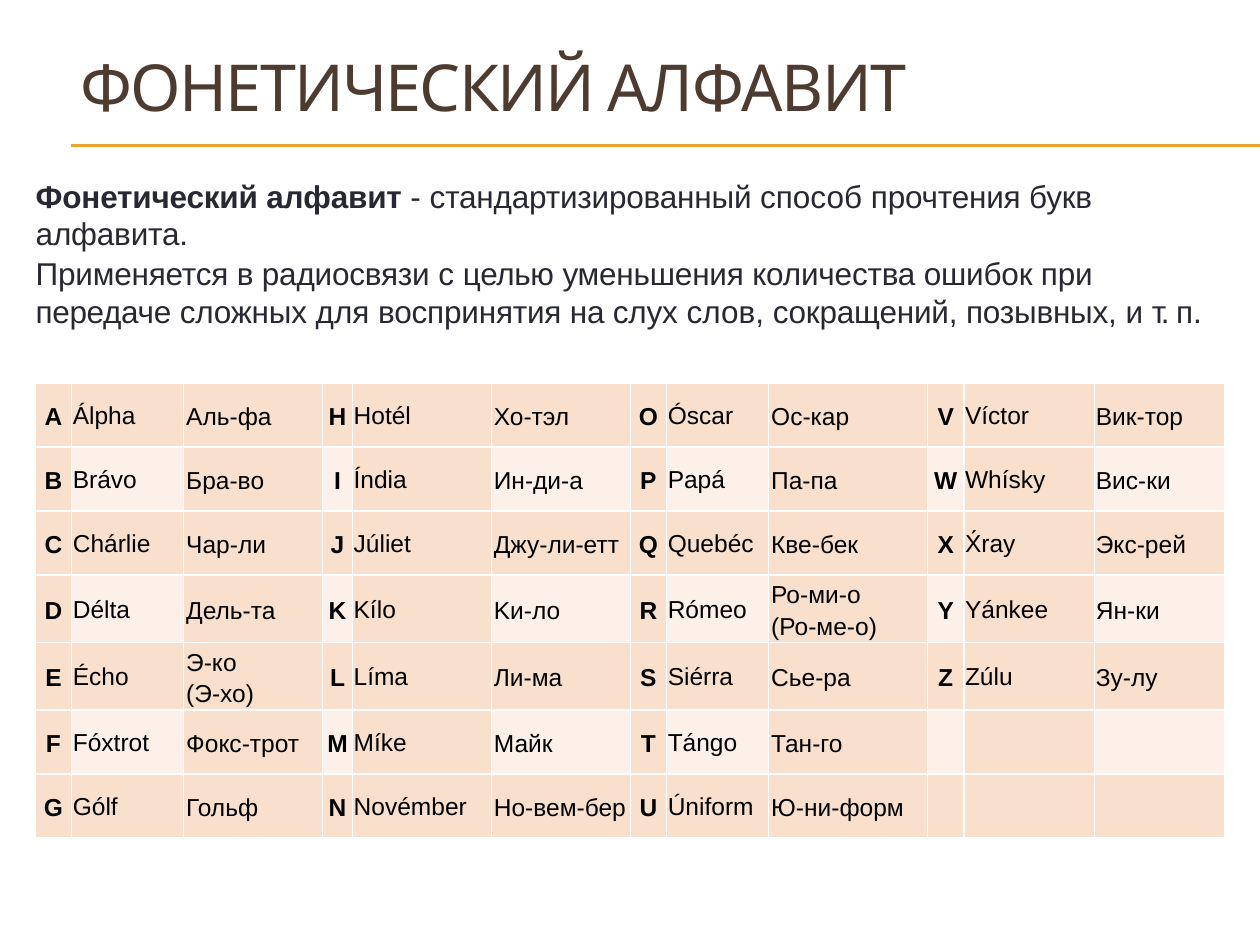
from pptx import Presentation
from pptx import util as u
from pptx.dml import color
from pptx.enum import shapes, text
from pptx.oxml import parse_xml
from pptx.oxml.ns import nsdecls

Pt = u.Pt
LEFT, CENTER = text.PP_ALIGN.LEFT, text.PP_ALIGN.CENTER


def rgb(value):
    return color.RGBColor.from_string(value)


def add_run(p, words, size=14, font="Arial", fill="000000", bold=False, spc=0):
    """Add a run to a paragraph; a newline becomes a line break."""
    for i, line in enumerate(words.split("\n")):
        if i:
            p.add_line_break()
        r = p.add_run()
        r.text = line
        r.font.size, r.font.name, r.font.bold = Pt(size), font, bold
        r.font.color.rgb = rgb(fill)
        if spc:
            r._r.get_or_add_rPr().set("spc", str(round(spc * 100)))


class Deck:
    title = dict(size=37, font="Cabin", fill="4E3B30")
    body = dict(size=18, fill="282833")
    accent, dark, light, border = "F0A22E", "F9E0CD", "FCF0E8", "FFFFFF"

    def __init__(self, width, height):
        self.prs = Presentation()
        self.prs.slide_width, self.prs.slide_height = Pt(width), Pt(height)
        self.s = self.prs.slides.add_slide(self.prs.slide_layouts[6])

    def rule(self, x1, x2, y):
        c = self.s.shapes.add_connector(
            shapes.MSO_CONNECTOR.STRAIGHT, Pt(x1), Pt(y), Pt(x2), Pt(y))
        c.line.color.rgb, c.line.width = rgb(self.accent), Pt(0.75)
        c._element.spPr.append(parse_xml(f"<a:effectLst {nsdecls('a')}/>"))

    def textbox(self, box, paragraphs, anchor, **style):
        """Each paragraph is a list of (text, letter spacing) runs."""
        sp = self.s.shapes.add_textbox(*map(Pt, box))
        tf = sp.text_frame
        tf.word_wrap, tf.vertical_anchor = True, anchor
        tf.margin_left = tf.margin_right = tf.margin_bottom = 0
        tf.margin_top = Pt(0.9)
        for i, runs in enumerate(paragraphs):
            p = tf.add_paragraph() if i else tf.paragraphs[0]
            p.space_before = Pt(0.9)
            for words, spc, *bold in runs:
                add_run(p, words, spc=spc, bold=bool(bold), **style)

    def table(self, x, y, widths, row_height, rows):
        frame = self.s.shapes.add_table(
            len(rows), len(widths), Pt(x), Pt(y),
            Pt(sum(widths)), Pt(row_height * len(rows)))
        table = frame.table
        table.first_row = table.horz_banding = False
        for column, width in zip(table.columns, widths):
            column.width = Pt(width)
        for i, row in enumerate(rows):
            table.rows[i].height = Pt(row_height)
            for j, words in enumerate(row):
                self.cell(table.cell(i, j), i, j, words)

    def cell(self, cell, i, j, words):
        tc_pr = cell._tc.get_or_add_tcPr()
        for side in "LRTB":
            tc_pr.append(parse_xml(
                f'<a:ln{side} {nsdecls("a")} w="12700"><a:solidFill>'
                f'<a:srgbClr val="{self.border}"/></a:solidFill></a:ln{side}>'))
        cell.fill.solid()
        cell.fill.fore_color.rgb = rgb(self.light if i % 2 and j % 2 else self.dark)
        if not words:
            return
        # Columns repeat as letter, code word, pronunciation
        kind = j % 3
        tight = kind == 1 or j >= 9
        cell.margin_left = cell.margin_right = Pt(0.72 if tight else 1.44)
        cell.margin_top = cell.margin_bottom = Pt(0.72 if tight else 0)
        cell.vertical_anchor = text.MSO_ANCHOR.MIDDLE
        p = cell.text_frame.paragraphs[0]
        p.alignment = CENTER if kind == 0 else LEFT
        p.line_spacing = 1.07 if kind == 1 else 1.15
        if kind == 1:
            p.space_after = Pt(8)
        add_run(p, words, bold=kind == 0)


ALPHABET = [
    ("A", "Álpha", "Аль-фа"), ("B", "Brávo", "Бра-во"),
    ("C", "Chárlie", "Чар-ли"), ("D", "Délta", "Дель-та"),
    ("E", "Écho", "Э-ко\n(Э-хо)"), ("F", "Fóxtrot", "Фокс-трот"),
    ("G", "Gólf", "Гольф"), ("H", "Hotél", "Хо-тэл"),
    ("I", "Índia", "Ин-ди-а"), ("J", "Júliet", "Джу-ли-етт"),
    ("K", "Kílo", "Kи-ло"), ("L", "Líma", "Ли-ма"),
    ("M", "Míke", "Майк"), ("N", "Novémber", "Но-вем-бер"),
    ("O", "Óscar", "Ос-кар"), ("P", "Papá", "Па-па"),
    ("Q", "Quebéc", "Кве-бек"), ("R", "Rómeo", "Ро-ми-о\n(Ро-ме-о)"),
    ("S", "Siérra", "Сье-ра"), ("T", "Tángo", "Тан-го"),
    ("U", "Úniform", "Ю-ни-форм"), ("V", "Víctor", "Вик-тор"),
    ("W", "Whísky", "Вис-ки"), ("X", "X́ray", "Экс-рей"),
    ("Y", "Yánkee", "Ян-ки"), ("Z", "Zúlu", "Зу-лу"),
]
ROWS, GROUPS = 7, 4
WIDTHS = [20.7, 64.1, 79.4, 17, 79.4, 79.4, 20.7, 58.4, 90.8, 20.7, 74.8, 74.6]

INTRO = [
    [("Фонетический алфавит ", -0.1, "bold"), ("- ", 0),
     ("стандартизированный ", -0.1), ("способ ", 0),
     ("прочтения букв алфавита.", -0.1)],
    [("Применяется в радиосвязи ", -0.1), ("с ", 0), ("целью ", -0.2),
     ("уменьшения количества ошибок при ", -0.1), ("передаче ", -0.2),
     ("сложных ", -0.1), ("для ", 0), ("воспринятия на слух ", -0.1),
     ("слов, ", 0), ("сокращений, позывных, ", -0.1), ("и ", 0),
     ("т. ", -1.2), ("п.", -0.1)],
]


def main():
    deck = Deck(720, 540)

    # Double rule under the title
    for y in (82.8, 83.4):
        deck.rule(40.4, 720, y)

    # Title and introduction
    deck.textbox((46.1, 25.9, 654.5, 45.4),
                 [[("ФОНЕТИЧЕСКИЙ ", -1), ("АЛФАВИТ", -0.8)]],
                 text.MSO_ANCHOR.MIDDLE, **deck.title)
    deck.textbox((20.4, 100.1, 680.4, 89.3), INTRO,
                 text.MSO_ANCHOR.TOP, **deck.body)

    # Alphabet runs down each group of three columns
    entries = ALPHABET + [("", "", "")] * (ROWS * GROUPS - len(ALPHABET))
    rows = [[words for entry in entries[i::ROWS] for words in entry]
            for i in range(ROWS)]
    deck.table(20.2, 218.9, WIDTHS, 36.55, rows)

    deck.prs.save("out.pptx")


if __name__ == "__main__":
    main()
